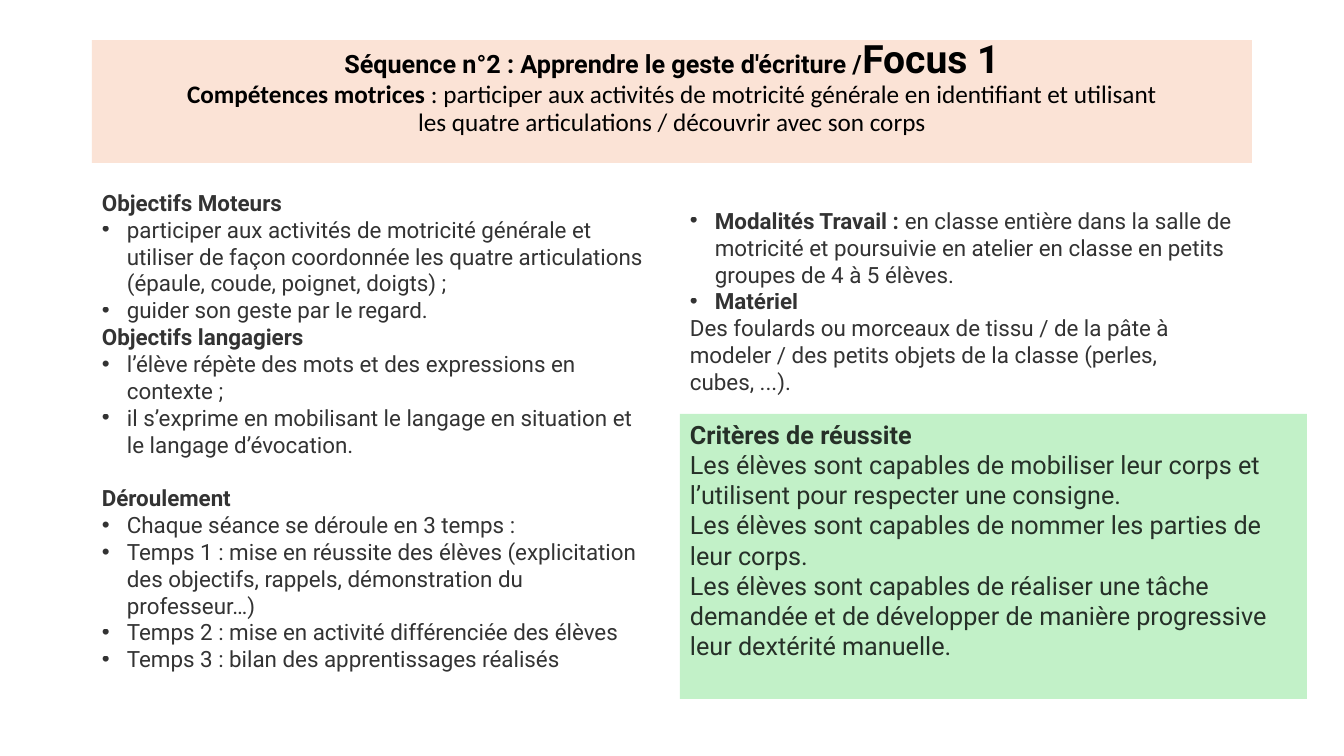
"""Build the slide on the handwriting sequence, Focus 1."""
from lxml import etree
from pptx import Presentation
from pptx import util as u
from pptx.dml.color import RGBColor
from pptx.enum import shapes, text
from pptx.oxml.ns import qn

PX = u.Inches(1) / 100.8
SLIDE = (1344, 756)
THEME = {
    "black": "000000", "peach": "FBE3D6", "green": "C2F1C8", "body_alpha": 80,
    "heading": ("Roboto", 18, True), "focus": ("Roboto", 27.9, True),
    "skill": ("Calibri", 18, True), "skill_text": ("Calibri", 18, False),
    "label": ("Roboto", 16, True), "body": ("Roboto", 16, False),
    "criteria": ("Roboto", 18, False),
}
BULLET_INDENT = 25
SECTION_GAP = 19

# Each paragraph is (kind, runs); each run is (text, style).
BANNER = [
    ("plain", [("Séquence n°2 : Apprendre le geste d'écriture /", "heading"), ("Focus 1", "focus")]),
    ("plain", [("Compétences motrices ", "skill"),
               (": participer aux activités de motricité générale en identifiant et utilisant", "skill_text")]),
    ("plain", [("les quatre articulations / découvrir avec son corps", "skill_text")]),
]
GOALS = [
    ("plain", [("Objectifs Moteurs", "label")]),
    ("bullet", [("participer aux activités de motricité générale et utiliser de façon coordonnée "
                 "les quatre articulations (épaule, coude, poignet, doigts) ;", "body")]),
    ("bullet", [("guider son geste par le regard.", "body")]),
    ("plain", [("Objectifs langagiers", "label")]),
    ("bullet", [("l’élève répète des mots et des expressions en contexte ;", "body")]),
    ("bullet", [("il s’exprime en mobilisant le langage en situation et le langage d’évocation.", "body")]),
    ("section", [("Déroulement", "label")]),
    ("bullet", [("Chaque séance se déroule en 3 temps :", "body")]),
    ("bullet", [("Temps 1 : mise en réussite des élèves (explicitation des objectifs, rappels, "
                 "démonstration du professeur…)", "body")]),
    ("bullet", [("Temps 2 : mise en activité différenciée des élèves", "body")]),
    ("bullet", [("Temps 3 : bilan des apprentissages réalisés", "body")]),
]
SETUP = [
    ("bullet", [("Modalités Travail : ", "label"),
                ("en classe entière dans la salle de motricité et poursuivie en atelier "
                 "en classe en petits groupes de 4 à 5 élèves.", "body")]),
    ("bullet", [("Matériel", "label")]),
    ("plain", [("Des foulards ou morceaux de tissu / de la pâte à modeler / "
                "des petits objets de la classe (perles, cubes, ...).", "body")]),
]
CRITERIA = [
    ("plain", [("Critères de réussite", "heading")]),
    ("plain", [("Les élèves sont capables de mobiliser leur corps et l’utilisent "
                "pour respecter une consigne.", "criteria")]),
    ("plain", [("Les élèves sont capables de nommer les parties de leur corps.", "criteria")]),
    ("plain", [("Les élèves sont capables de réaliser une tâche demandée et de développer "
                "de manière progressive leur dextérité manuelle.", "criteria")]),
]


def px(length):
    return round(length * PX)


def add_bullet(paragraph):
    props = paragraph._p.get_or_add_pPr()
    props.set("marL", str(px(BULLET_INDENT)))
    props.set("indent", str(-px(BULLET_INDENT)))
    etree.SubElement(props, qn("a:buFont")).set("typeface", "Arial")
    etree.SubElement(props, qn("a:buChar")).set("char", "•")


def add_run(paragraph, words, style, alpha):
    run = paragraph.add_run()
    run.text = words
    face, size, run.font.bold = THEME[style]
    run.font.name, run.font.size = face, u.Pt(size)
    run.font.color.rgb = RGBColor.from_string(THEME["black"])
    if alpha < 100:
        ink = run._r.rPr.find(".//" + qn("a:srgbClr"))
        etree.SubElement(ink, qn("a:alpha")).set("val", str(alpha * 1000))


def add_block(slide, box, content, fill=None, alpha=100, align=text.PP_ALIGN.LEFT, spacing=1.0):
    place = [px(length) for length in box]
    if fill:
        block = slide.shapes.add_shape(shapes.MSO_SHAPE.RECTANGLE, *place)
        block.shadow.inherit = False
        block.fill.solid()
        block.fill.fore_color.rgb = RGBColor.from_string(fill)
        block.line.fill.background()
    else:
        block = slide.shapes.add_textbox(*place)
    frame = block.text_frame
    frame.word_wrap = True
    frame.vertical_anchor = text.MSO_ANCHOR.TOP
    for index, (kind, runs) in enumerate(content):
        paragraph = frame.add_paragraph() if index else frame.paragraphs[0]
        paragraph.alignment = align
        paragraph.line_spacing = spacing
        if kind == "section":
            paragraph.space_before = u.Pt(SECTION_GAP)
        if kind == "bullet":
            add_bullet(paragraph)
        for words, style in runs:
            add_run(paragraph, words, style, alpha)
    return frame


def main():
    deck = Presentation()
    deck.slide_width, deck.slide_height = map(px, SLIDE)
    slide = deck.slides.add_slide(deck.slide_layouts[6])
    faded = THEME["body_alpha"]
    banner = add_block(slide, (92, 40, 1160, 123), BANNER, THEME["peach"],
                       align=text.PP_ALIGN.CENTER, spacing=0.9)
    banner.margin_top = 0
    add_block(slide, (92, 184, 572, 497), GOALS, alpha=faded)
    add_block(slide, (680, 202, 572, 185), SETUP, alpha=faded)
    add_block(slide, (680, 414, 627, 285), CRITERIA, THEME["green"], faded)
    deck.save("out.pptx")


if __name__ == "__main__":
    main()
